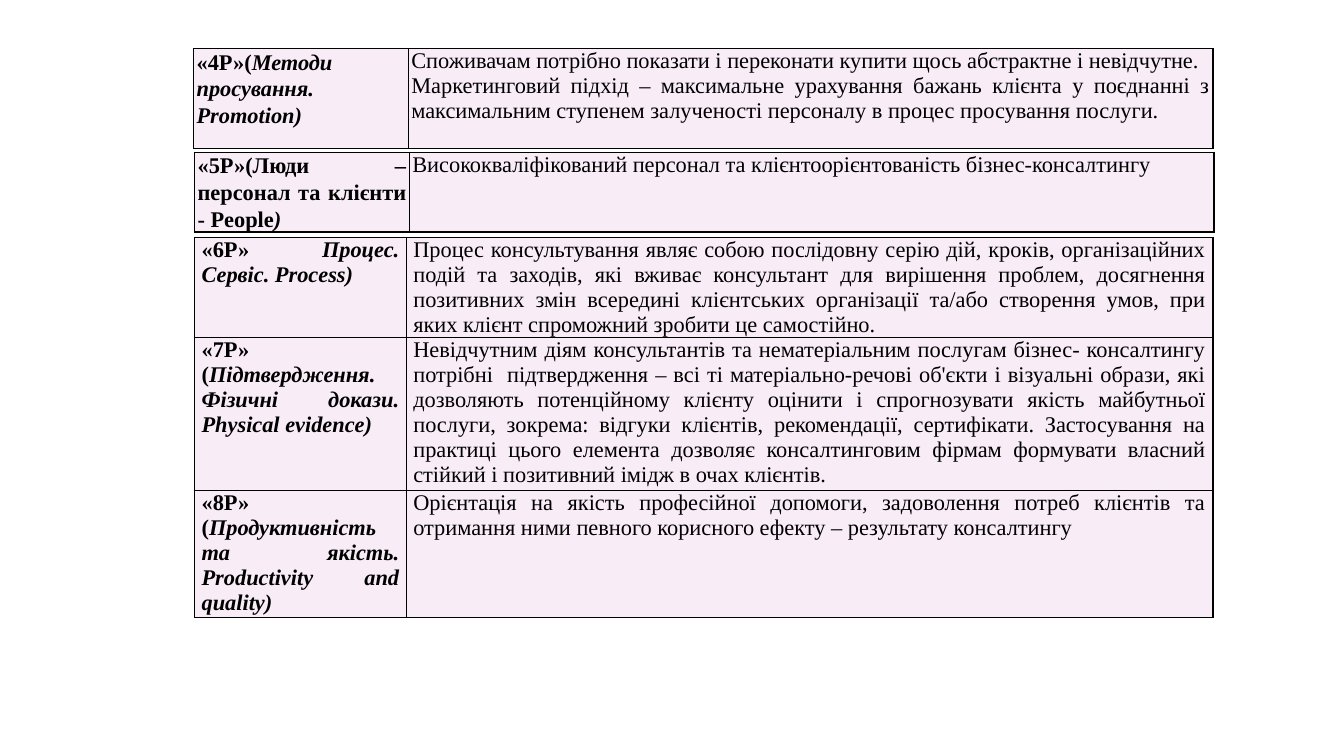
import pptx
import pptx.util
import pptx.dml.color
import pptx.enum.text
import pptx.oxml
import pptx.oxml.ns
from dataclasses import dataclass


@dataclass(frozen=True)
class Theme:
    font: str = "Times New Roman"
    size: int = 16
    ink: str = "000000"
    cell: str = "F8ECF7"
    border: int = 1


THEME = Theme()
SLIDE_WIDTH, SLIDE_HEIGHT = 13.33, 7.5

PROMOTION = [
    (("«4Р»(", "Методи просування. Promotion)"), [
        "Споживачам потрібно показати і переконати купити щось абстрактне і невідчутне.",
        "Маркетинговий підхід – максимальне урахування бажань клієнта у поєднанні з максимальним ступенем залученості персоналу в процес просування послуги.",
    ]),
]
PEOPLE = [
    (("«5Р»(Люди – персонал та клієнти - People", ")"), [
        "Висококваліфікований персонал та клієнтоорієнтованість бізнес-консалтингу",
    ]),
]
PROCESS_TO_QUALITY = [
    (("«6Р» ", "Процес. Сервіс. Process)"), [
        "Процес консультування являє собою послідовну серію дій, кроків, організаційних подій та заходів, які вживає консультант для вирішення проблем, досягнення позитивних змін всередині клієнтських організації та/або створення умов, при яких клієнт спроможний зробити це самостійно.",
    ]),
    (("«7Р» (", "Підтвердження. Фізичні докази. Рhysical evidence)"), [
        "Невідчутним діям консультантів та нематеріальним послугам бізнес- консалтингу потрібні  підтвердження – всі ті матеріально-речові об'єкти і візуальні образи, які дозволяють потенційному клієнту оцінити і спрогнозувати якість майбутньої послуги, зокрема: відгуки клієнтів, рекомендації, сертифікати. Застосування на практиці цього елемента дозволяє консалтинговим фірмам формувати власний стійкий і позитивний імідж в очах клієнтів.",
    ]),
    (("«8Р» (", "Продуктивність та якість. Productivity and quality)"), [
        "Орієнтація на якість професійної допомоги, задоволення потреб клієнтів та отримання ними певного корисного ефекту – результату консалтингу",
    ]),
]

SECTIONS = [
    dict(elements=PROMOTION, left=1.92, top=0.48, columns=(2.13, 7.98), rows=(0.99,), inset=0.03, airy=True),
    dict(elements=PEOPLE, left=1.93, top=1.51, columns=(2.13, 7.98), rows=(0.79,), inset=0.03, airy=True),
    dict(elements=PROCESS_TO_QUALITY, left=1.93, top=2.36, columns=(2.1, 8), rows=(0.99, 1.52, 1.26), inset=0.07, airy=False),
]


def add_run(paragraph, text, bold=False, italic=False):
    run = paragraph.add_run()
    run.text = text
    run.font.name = THEME.font
    run.font.size = pptx.util.Pt(THEME.size)
    run.font.color.rgb = pptx.dml.color.RGBColor.from_string(THEME.ink)
    run.font.bold = bold
    run.font.italic = italic


def format_cell(cell, inset):
    cell.margin_left = cell.margin_right = pptx.util.Inches(inset)
    cell.margin_top = cell.margin_bottom = 0
    properties = cell._tc.get_or_add_tcPr()
    for side in ("lnL", "lnR", "lnT", "lnB"):
        properties.append(pptx.oxml.parse_xml(
            f'<a:{side} {pptx.oxml.ns.nsdecls("a")} w="{pptx.util.Pt(THEME.border)}">'
            f'<a:solidFill><a:srgbClr val="{THEME.ink}"/></a:solidFill></a:{side}>'))
    cell.fill.solid()
    cell.fill.fore_color.rgb = pptx.dml.color.RGBColor.from_string(THEME.cell)


def write_cell(cell, paragraphs):
    for index, runs in enumerate(paragraphs):
        paragraph = cell.text_frame.paragraphs[0] if index == 0 else cell.text_frame.add_paragraph()
        paragraph.alignment = pptx.enum.text.PP_ALIGN.JUSTIFY
        for text, bold, italic in runs:
            add_run(paragraph, text, bold, italic)


def add_section(slide, elements, left, top, columns, rows, inset, airy):
    frame = slide.shapes.add_table(
        len(rows), len(columns),
        *(pptx.util.Inches(length) for length in (left, top, sum(columns), sum(rows))))
    table = frame.table
    table.first_row = table.horz_banding = False
    for column, width in zip(table.columns, columns):
        column.width = pptx.util.Inches(width)
    for row, height, ((label, name), description) in zip(table.rows, rows, elements):
        row.height = pptx.util.Inches(height)
        element_cell, description_cell = row.cells
        for cell in (element_cell, description_cell):
            format_cell(cell, inset)
        write_cell(element_cell, [[(label, True, False), (name, True, True)]])
        write_cell(description_cell, [[(text, False, False)] for text in description])
        if airy:
            heading = element_cell.text_frame.paragraphs[0]
            heading.line_spacing = 1.07
            heading.space_after = pptx.util.Pt(8)


def main():
    presentation = pptx.Presentation()
    presentation.slide_width = pptx.util.Inches(SLIDE_WIDTH)
    presentation.slide_height = pptx.util.Inches(SLIDE_HEIGHT)
    slide = presentation.slides.add_slide(presentation.slide_layouts[6])
    for section in SECTIONS:
        add_section(slide, **section)
    presentation.save("out.pptx")


if __name__ == "__main__":
    main()
